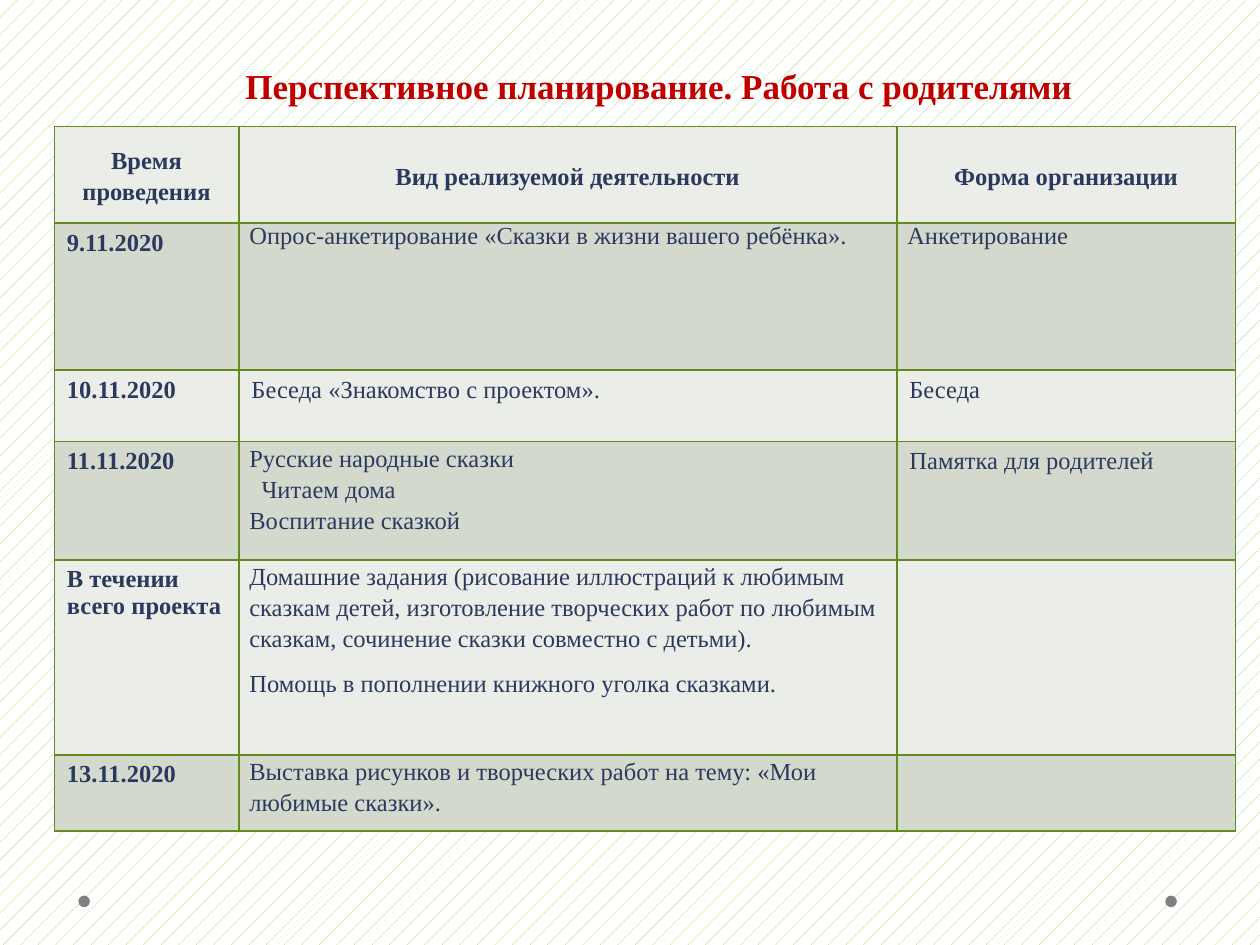
import pptx
import pptx.util
import pptx.dml.color
import pptx.enum.dml
import pptx.enum.shapes
import pptx.enum.text
import pptx.oxml
import pptx.oxml.ns
import lxml.etree

Pt = pptx.util.Pt
RGBColor = pptx.dml.color.RGBColor
Align = pptx.enum.text.PP_ALIGN
Anchor = pptx.enum.text.MSO_ANCHOR

WHITE = RGBColor(0xFF, 0xFF, 0xFF)
LIME = RGBColor(0x92, 0xD0, 0x50)
GREEN = RGBColor(0x63, 0x89, 0x1F)
PALE = RGBColor(0xEA, 0xED, 0xE8)
SAGE = RGBColor(0xD3, 0xDA, 0xCD)
NAVY = RGBColor(0x2C, 0x39, 0x5E)
RED = RGBColor(0xC0, 0x00, 0x00)
GRAY = RGBColor(0x80, 0x80, 0x80)

TITLE_FONT = {"name": "Times New Roman", "size": Pt(20), "bold": True}
CELL_FONT = {"name": "Times New Roman", "size": Pt(14)}
TIGHT_MARGINS = {"margin_left": Pt(6), "margin_right": Pt(6), "margin_top": 0, "margin_bottom": 0}
HEADER = {"alignment": Align.CENTER, "line_spacing": 1.15, "space_after": Pt(7.5)}
LOOSE = {"line_spacing": 1.15, "space_after": Pt(7.5)}
LINES = {"line_spacing": 1.15}
TIGHT = {"space_after": Pt(7.5)}
PLAIN = {}

COLUMN_WIDTHS = [105.5, 376, 193.5]
ROW_HEIGHTS = [55, 84, 41, 67.5, 111.5, 43.5]
ROWS = [
    [[("Время проведения", HEADER)], [("Вид реализуемой деятельности", HEADER)],
     [("Форма организации", HEADER)]],
    [[("9.11.2020", PLAIN)],
     [("Опрос-анкетирование «Сказки в жизни вашего ребёнка».", TIGHT)],
     [("Анкетирование", TIGHT)]],
    [[("10.11.2020", PLAIN)], [("Беседа «Знакомство с проектом».", PLAIN)], [("Беседа", PLAIN)]],
    [[("11.11.2020", PLAIN)],
     [("Русские народные сказки", LINES), ("Читаем дома", LINES), ("Воспитание сказкой", LOOSE)],
     [("Памятка для родителей", PLAIN)]],
    [[("В течении всего проекта", PLAIN)],
     [("Домашние задания (рисование иллюстраций к любимым сказкам детей, изготовление "
       "творческих работ по любимым сказкам, сочинение сказки совместно с детьми).", LOOSE),
      ("Помощь в пополнении книжного уголка сказками.", LOOSE)], []],
    [[("13.11.2020", PLAIN)],
     [("Выставка рисунков и творческих работ на тему: «Мои любимые сказки».", LOOSE)], []],
]
INDENTED = "Читаем дома"


def apply(target, values):
    for name, value in values.items():
        setattr(target, name, value)


def add_span(para, text, font, color):
    span = para.add_run()
    span.text = text
    apply(span.font, font)
    span.font.color.rgb = color


def paint_background(page):
    fill = page.background.fill
    fill.patterned()
    fill.pattern = pptx.enum.dml.MSO_PATTERN.PERCENT_5
    fill.fore_color.rgb = LIME
    fill.back_color.rgb = WHITE


def add_dots(page, left, top, width, size):
    for x in (left, left + width - size):
        dot = page.shapes.add_shape(
            pptx.enum.shapes.MSO_SHAPE.OVAL, Pt(x), Pt(top), Pt(size), Pt(size))
        dot.shadow.inherit = False
        dot.fill.solid()
        dot.fill.fore_color.rgb = GRAY
        dot.line.fill.background()


def place_title(page, left, top, width, height):
    box = page.shapes.title
    apply(box, {"left": Pt(left), "top": Pt(top), "width": Pt(width), "height": Pt(height)})
    apply(box.text_frame, {"word_wrap": True, "vertical_anchor": Anchor.TOP,
                           "auto_size": pptx.enum.text.MSO_AUTO_SIZE.NONE})
    para = box.text_frame.paragraphs[0]
    apply(para, {"alignment": Align.LEFT, "line_spacing": 1.5})
    add_span(para, "Перспективное планирование. Работа с родителями", TITLE_FONT, RED)


def add_borders(cell):
    properties = cell._tc.get_or_add_tcPr()
    for side in ("a:lnL", "a:lnR", "a:lnT", "a:lnB"):
        line = lxml.etree.SubElement(properties, pptx.oxml.ns.qn(side), w=str(Pt(1)))
        fill = lxml.etree.SubElement(line, pptx.oxml.ns.qn("a:solidFill"))
        lxml.etree.SubElement(fill, pptx.oxml.ns.qn("a:srgbClr"), val=str(GREEN))


def fill_cell(cell, content, color, bold):
    add_borders(cell)
    cell.fill.solid()
    cell.fill.fore_color.rgb = color
    if any(style for text, style in content):
        apply(cell, TIGHT_MARGINS)
    for index, (text, style) in enumerate(content):
        frame = cell.text_frame
        para = frame.add_paragraph() if index else frame.paragraphs[0]
        apply(para, style)
        if text == INDENTED:
            para._p.get_or_add_pPr().set("marL", str(Pt(7)))
        add_span(para, text, {**CELL_FONT, "bold": bold}, NAVY)


def add_plan(page, left, top):
    table = page.shapes.add_table(
        len(ROWS), len(COLUMN_WIDTHS), Pt(left), Pt(top),
        Pt(sum(COLUMN_WIDTHS)), Pt(sum(ROW_HEIGHTS))).table
    table.horz_banding = False
    for column, width in zip(table.columns, COLUMN_WIDTHS):
        column.width = Pt(width)
    for row, (contents, height) in enumerate(zip(ROWS, ROW_HEIGHTS)):
        table.rows[row].height = Pt(height)
        for column, content in enumerate(contents):
            cell = table.cell(row, column)
            fill_cell(cell, content, SAGE if row % 2 else PALE, row == 0 or column == 0)
            if row == 0:
                cell.vertical_anchor = Anchor.MIDDLE


def main():
    deck = pptx.Presentation()
    apply(deck, {"slide_width": Pt(720), "slide_height": Pt(540)})
    page = deck.slides.add_slide(deck.slide_layouts[5])
    paint_background(page)
    add_dots(page, 44.8, 511.8, 627.7, 6.6)
    place_title(page, 133, 21, 533, 44)
    add_plan(page, 31, 72.4)
    deck.save("out.pptx")


if __name__ == "__main__":
    main()
